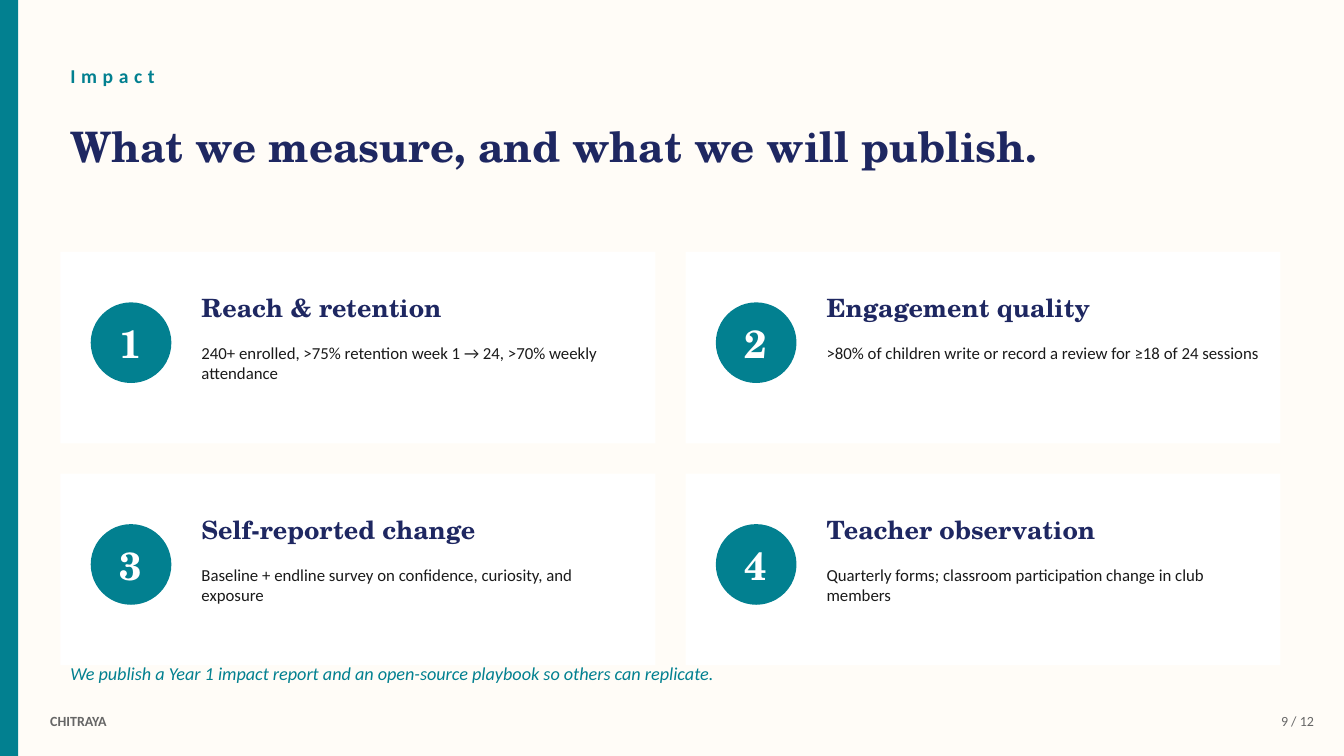
"""Build the impact slide: four numbered measures in a two-by-two grid of cards."""
from pptx import Presentation
from pptx.dml.color import RGBColor
from pptx.enum.shapes import MSO_SHAPE
from pptx.enum.text import MSO_ANCHOR, PP_ALIGN
from pptx.util import Inches, Pt

MEASURES = [
    ("Reach & retention", "240+ enrolled, >75% retention week 1 → 24, >70% weekly attendance"),
    ("Engagement quality", ">80% of children write or record a review for ≥18 of 24 sessions"),
    ("Self-reported change", "Baseline + endline survey on confidence, curiosity, and exposure"),
    ("Teacher observation", "Quarterly forms; classroom participation change in club members"),
]
PAGE_TEXTS = [
    ("Impact", "kicker", (0.6, 0.5, 6, 0.5)),
    ("What we measure, and what we will publish.", "title", (0.6, 1, 12, 0.9)),
    ("We publish a Year 1 impact report and an open-source playbook so others can replicate.",
     "closing", (0.6, 6.5, 12, 0.35)),
    ("9 / 12", "page_number", (12.13, 7, 1, 0.3)),
    ("CHITRAYA", "footer", (0.4, 7, 2, 0.3)),
]

COLOURS = {"teal": "028090", "navy": "1E2761", "ink": "1A1A1A",
           "grey": "666666", "white": "FFFFFF", "cream": "FFFCF7"}
SERIF, SANS = "TeX Gyre Schola", "Calibri"
STYLES = {
    "kicker": ({"name": SANS, "size": Pt(14), "bold": True}, "teal"),
    "title": ({"name": SERIF, "size": Pt(30), "bold": True}, "navy"),
    "number": ({"name": SERIF, "size": Pt(28), "bold": True}, "white"),
    "heading": ({"name": SERIF, "size": Pt(18), "bold": True}, "navy"),
    "detail": ({"name": SANS, "size": Pt(12)}, "ink"),
    "closing": ({"name": SANS, "size": Pt(13), "italic": True}, "teal"),
    "page_number": ({"name": SANS, "size": Pt(10)}, "grey"),
    "footer": ({"name": SANS, "size": Pt(10), "bold": True}, "grey"),
}
ALIGNMENTS = {"number": PP_ALIGN.CENTER, "page_number": PP_ALIGN.RIGHT}
ANCHORS = {"detail": MSO_ANCHOR.TOP}
LETTER_SPACING = {"kicker": 4}

PAGE_WIDTH, PAGE_HEIGHT = 13.33, 7.5
COLUMNS = 2
GRID_LEFT, GRID_TOP = 0.6, 2.5
CARD_WIDTH, CARD_HEIGHT, GAP = 5.9, 1.9, 0.3


def colour(name):
    return RGBColor.from_string(COLOURS[name])


def write(shape, text, style):
    frame = shape.text_frame
    frame.word_wrap = True
    frame.vertical_anchor = ANCHORS.get(style, MSO_ANCHOR.MIDDLE)
    para = frame.paragraphs[0]
    para.alignment = ALIGNMENTS.get(style, PP_ALIGN.LEFT)
    span = para.add_run()
    span.text = text
    formats, ink = STYLES[style]
    for attribute, value in formats.items():
        setattr(span.font, attribute, value)
    span.font.color.rgb = colour(ink)
    if style in LETTER_SPACING:
        span.font._element.set("spc", str(LETTER_SPACING[style] * 100))


def add_text(page, text, style, place):
    write(page.shapes.add_textbox(*map(Inches, place)), text, style)


def add_block(page, kind, fill, place):
    block = page.shapes.add_shape(kind, *map(Inches, place))
    block.shadow.inherit = False
    block.fill.solid()
    block.fill.fore_color.rgb = colour(fill)
    block.line.fill.background()
    return block


def add_card(page, index, heading, detail):
    row, column = divmod(index, COLUMNS)
    left = GRID_LEFT + column * (CARD_WIDTH + GAP)
    top = GRID_TOP + row * (CARD_HEIGHT + GAP)
    add_block(page, MSO_SHAPE.RECTANGLE, "white", (left, top, CARD_WIDTH, CARD_HEIGHT))
    badge = add_block(page, MSO_SHAPE.OVAL, "teal", (left + 0.3, top + 0.5, 0.8, 0.8))
    for side in ("left", "right", "top", "bottom"):
        setattr(badge.text_frame, f"margin_{side}", 0)
    write(badge, str(index + 1), "number")
    add_text(page, heading, "heading", (left + 1.3, top + 0.3, 4.5, 0.5))
    add_text(page, detail, "detail", (left + 1.3, top + 0.85, 4.5, 0.95))


def main():
    deck = Presentation()
    deck.slide_width, deck.slide_height = Inches(PAGE_WIDTH), Inches(PAGE_HEIGHT)
    page = deck.slides.add_slide(deck.slide_layouts[6])
    page.background.fill.solid()
    page.background.fill.fore_color.rgb = colour("cream")
    add_block(page, MSO_SHAPE.RECTANGLE, "teal", (0, 0, 0.18, PAGE_HEIGHT))
    for index, measure in enumerate(MEASURES):
        add_card(page, index, *measure)
    for text, style, place in PAGE_TEXTS:
        add_text(page, text, style, place)
    deck.save("out.pptx")


if __name__ == "__main__":
    main()
